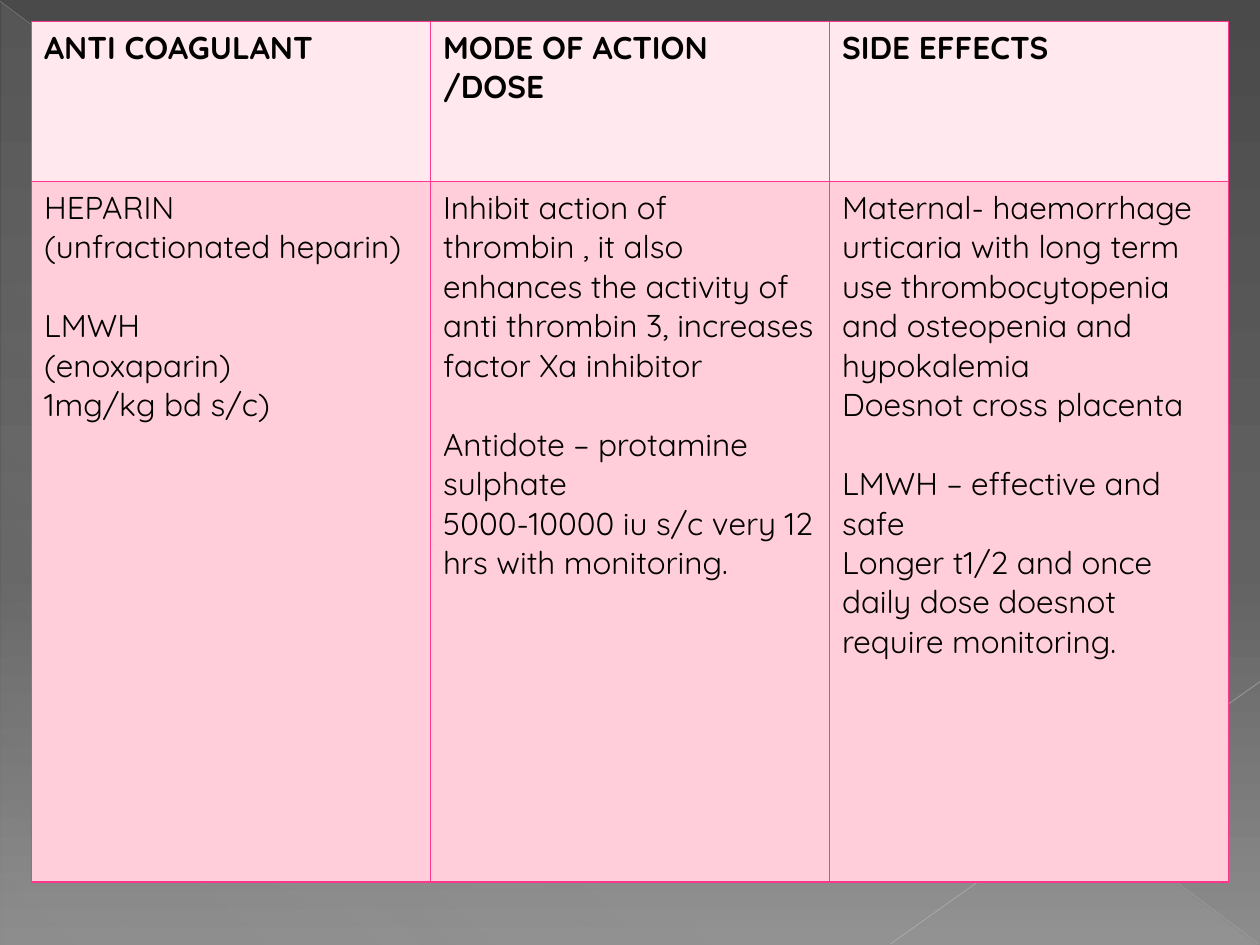
from dataclasses import dataclass

from lxml import etree
from pptx import Presentation
from pptx.dml.color import RGBColor
from pptx.enum.shapes import MSO_CONNECTOR, MSO_SHAPE
from pptx.oxml.ns import qn
from pptx.util import Inches, Pt


@dataclass(frozen=True)
class Theme:
    font: str = "Quicksand"
    text_size: float = 18
    paragraph_gap: float = 22.5
    text: str = "000000"
    header_fill: str = "FFE8EE"
    body_fill: str = "FFCEDA"
    border: str = "FF388C"
    border_width: float = 1
    backdrop: tuple = ((0, "4A4A4A", 100), (60, "626262", 100), (100, "8C8C8C", 100))
    sheen: tuple = ((0, "D2D2D2", 10), (70, "D2D2D2", 8), (100, "D2D2D2", 1))


THEME = Theme()

HEADERS = ["ANTI COAGULANT", "MODE OF ACTION /DOSE", "SIDE EFFECTS"]
# Each cell is a list of groups; a gap separates one group from the next.
DETAILS = [
    [["HEPARIN", "(unfractionated heparin)"],
     ["LMWH", "(enoxaparin)", "1mg/kg bd s/c)"]],
    [["Inhibit action of thrombin , it also enhances the activity of "
      "anti thrombin 3, increases factor Xa inhibitor"],
     ["Antidote – protamine sulphate",
      "5000-10000 iu s/c very 12 hrs with monitoring."]],
    [["Maternal- haemorrhage urticaria with long term use thrombocytopenia "
      "and osteopenia and hypokalemia",
      "Doesnot cross placenta"],
     ["LMWH – effective and safe",
      "Longer t1/2 and once daily dose doesnot require monitoring."]],
]


def add_color(parent, color, opacity=100):
    rgb = etree.SubElement(parent, qn("a:srgbClr"), val=color)
    if opacity < 100:
        etree.SubElement(rgb, qn("a:alpha"), val=str(opacity * 1000))


def set_gradient(fill, owner, stops, angle):
    """Give the fill, found inside owner, any number of (percent, colour, opacity) stops."""
    fill.gradient()
    gradient = owner.find(".//" + qn("a:gradFill"))
    for child in list(gradient):
        gradient.remove(child)
    stop_list = etree.SubElement(gradient, qn("a:gsLst"))
    for percent, color, opacity in stops:
        stop = etree.SubElement(stop_list, qn("a:gs"), pos=str(percent * 1000))
        add_color(stop, color, opacity)
    etree.SubElement(gradient, qn("a:lin"), ang=str(angle * 60000), scaled="0")


def add_ray(slide, start, end, color, width, opacity):
    ray = slide.shapes.add_connector(
        MSO_CONNECTOR.STRAIGHT, *(Inches(v) for v in (*start, *end)))
    ray.line.width = Pt(width)
    ray.line.color.rgb = RGBColor.from_string(color)
    properties = ray._element.spPr
    rgb = properties.find(".//" + qn("a:srgbClr"))
    etree.SubElement(rgb, qn("a:alpha"), val=str(opacity * 1000))
    etree.SubElement(properties, qn("a:effectLst"))


def add_backdrop(slide, left, top, width, height):
    set_gradient(slide.background.fill, slide._element, THEME.backdrop, 90)
    sheen = slide.shapes.add_shape(
        MSO_SHAPE.RIGHT_TRIANGLE, Inches(left + 0.01), Inches(top + 0.02),
        Inches(width - 0.02), Inches(height - 0.02))
    sheen.shadow.inherit = False
    sheen.line.fill.background()
    set_gradient(sheen.fill, sheen._element.spPr, THEME.sheen, 133)
    right, bottom = left + width, top + height - 0.01
    add_ray(slide, (left, top + 0.01), (right - 0.01, bottom), "BFBFBF", 0.39, 35)
    add_ray(slide, (right, top + 5.41), (left + 7.07, bottom), "C6C6C6", 0.47, 45)


def set_borders(cell):
    properties = cell._tc.get_or_add_tcPr()
    for index, side in enumerate(("a:lnL", "a:lnR", "a:lnT", "a:lnB")):
        border = etree.Element(qn(side), w=str(Pt(THEME.border_width)))
        add_color(etree.SubElement(border, qn("a:solidFill")), THEME.border)
        properties.insert(index, border)


def fill_cell(cell, groups, color, bold):
    cell.fill.solid()
    cell.fill.fore_color.rgb = RGBColor.from_string(color)
    set_borders(cell)
    frame = cell.text_frame
    lines = [(text, i > 0 and j == 0)
             for i, group in enumerate(groups) for j, text in enumerate(group)]
    for number, (text, starts_group) in enumerate(lines):
        paragraph = frame.add_paragraph() if number else frame.paragraphs[0]
        if starts_group:
            paragraph.space_before = Pt(THEME.paragraph_gap)
        run = paragraph.add_run()
        run.text = text
        run.font.name = THEME.font
        run.font.size = Pt(THEME.text_size)
        run.font.bold = bold
        run.font.color.rgb = RGBColor.from_string(THEME.text)


def add_drug_table(slide, left, top, width, height, header_height):
    table = slide.shapes.add_table(
        2, len(HEADERS), Inches(left), Inches(top), Inches(width), Inches(height)).table
    table.rows[0].height = Inches(header_height)
    table.rows[1].height = Inches(height - header_height)
    for column, (header, details) in enumerate(zip(HEADERS, DETAILS)):
        table.columns[column].width = Inches(width / len(HEADERS))
        fill_cell(table.cell(0, column), [[header]], THEME.header_fill, True)
        fill_cell(table.cell(1, column), details, THEME.body_fill, False)


def main():
    deck = Presentation()
    deck.slide_width, deck.slide_height = Inches(10), Inches(7.5)
    slide = deck.slides.add_slide(deck.slide_layouts[6])
    add_backdrop(slide, 0, 0, 10, 7.5)
    add_drug_table(slide, 0.25, 0.17, 9.5, 6.83, 1.27)
    deck.save("out.pptx")


if __name__ == "__main__":
    main()
